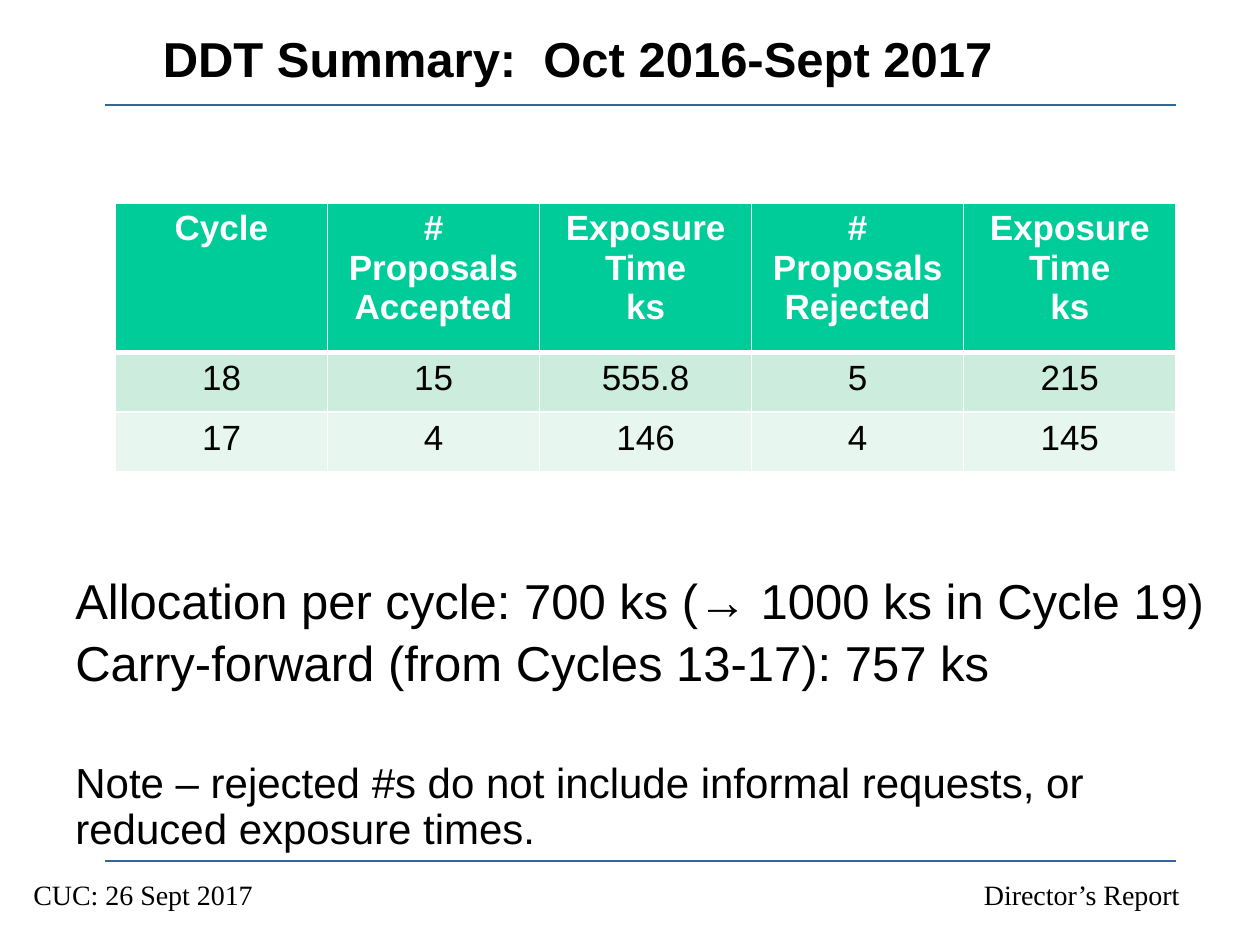
from lxml.etree import SubElement
from pptx import Presentation
from pptx.dml.color import RGBColor
from pptx.enum.shapes import MSO_CONNECTOR
from pptx.enum.text import MSO_ANCHOR, PP_ALIGN
from pptx.oxml.ns import qn
from pptx.util import Pt


def color(value):
    return RGBColor.from_string(value)


class Deck:
    font, text, rule, white = "Arial", "000000", "336699", "FFFFFF"
    header, bands = "00CC99", ("CCECDE", "E7F6EF")

    def __init__(self, prs):
        self.s = prs.slides.add_slide(prs.slide_layouts[6])

    def style(self, p, size, font=None, fill=None, bold=False):
        p.font.name = font or self.font
        p.font.size = Pt(size)
        p.font.bold = bold
        p.font.color.rgb = color(fill or self.text)

    def line(self, x1, x2, y):
        sp = self.s.shapes.add_connector(
            MSO_CONNECTOR.STRAIGHT, Pt(x1), Pt(y), Pt(x2), Pt(y))
        sp.line.color.rgb = color(self.rule)
        sp.line.width = Pt(0.75)
        SubElement(sp._element.spPr, qn("a:effectLst"))

    def box(self, x, y, w, h, anchor=MSO_ANCHOR.TOP):
        sp = self.s.shapes.add_textbox(Pt(x), Pt(y), Pt(w), Pt(h))
        tf = sp.text_frame
        tf.word_wrap = True
        tf.vertical_anchor = anchor
        return tf

    def title(self, text, *frame):
        p = self.box(*frame, anchor=MSO_ANCHOR.MIDDLE).paragraphs[0]
        p.text = text
        p.alignment = PP_ALIGN.CENTER
        self.style(p, 28, bold=True)

    def body(self, items, *frame):
        tf = self.box(*frame)
        for i, (text, size, before) in enumerate(items):
            p = tf.add_paragraph() if i else tf.paragraphs[0]
            p.text = text
            p.line_spacing = 0.9
            if before:
                p.space_before = Pt(before)
            self.style(p, size)

    def footer(self, left, right, tab, *frame):
        p = self.box(*frame).paragraphs[0]
        p.text = f"{left}\t{right}"
        tabs = SubElement(p._p.get_or_add_pPr(), qn("a:tabLst"))
        SubElement(tabs, qn("a:tab"), pos=str(Pt(tab)), algn="r")
        self.style(p, 16, font="Times New Roman")

    def border(self, cell, bottom):
        tcPr = cell._tc.get_or_add_tcPr()
        for side, width in (("L", 1), ("R", 1), ("T", 1), ("B", bottom)):
            ln = SubElement(tcPr, qn(f"a:ln{side}"), w=str(Pt(width)))
            fill = SubElement(ln, qn("a:solidFill"))
            SubElement(fill, qn("a:srgbClr"), val=self.white)

    def table(self, rows, heights, x, y, w):
        n = len(rows[0])
        tbl = self.s.shapes.add_table(
            len(rows), n, Pt(x), Pt(y), Pt(w), Pt(sum(heights))).table
        for col in tbl.columns:
            col.width = Pt(w / n)
        for i, (row, height) in enumerate(zip(rows, heights)):
            tbl.rows[i].height = Pt(height)
            head = i == 0
            for j, text in enumerate(row):
                cell = tbl.cell(i, j)
                cell.text = text
                for p in cell.text_frame.paragraphs:
                    p.alignment = PP_ALIGN.CENTER
                    self.style(p, 20, fill=self.white if head else self.text,
                               bold=head)
                self.border(cell, 3 if head else 1)
                cell.fill.solid()
                cell.fill.fore_color.rgb = color(
                    self.header if head else self.bands[(i - 1) % 2])


def main():
    prs = Presentation()
    prs.slide_width, prs.slide_height = Pt(720), Pt(540)
    deck = Deck(prs)

    # Rules above and below the content
    for y in (60, 492):
        deck.line(60, 672, y)

    # Title
    deck.title("DDT Summary:  Oct 2016-Sept 2017", 24, 12, 612, 42)

    # Proposal counts and exposure times
    deck.table([
        ("Cycle", "# Proposals\nAccepted", "Exposure Time\nks",
         "# Proposals\nRejected", "Exposure Time\nks"),
        ("18", "15", "555.8", "5", "215"),
        ("17", "4", "146", "4", "145"),
    ], (85.5, 34, 34), 66, 116, 606)

    # Allocation and note
    deck.body([
        ("Allocation per cycle: 700 ks (→ 1000 ks in Cycle 19)", 28, 0),
        ("Carry-forward (from Cycles 13-17): 757 ks", 28, 5.6),
        ("Note – rejected #s do not include informal requests, "
         "or reduced exposure times.", 24, 40),
    ], 36, 326, 678, 90)

    # Footer
    deck.footer("CUC: 26 Sept 2017", "Director’s Report", 655,
                12, 498, 690, 30)

    prs.save("out.pptx")


if __name__ == "__main__":
    main()
